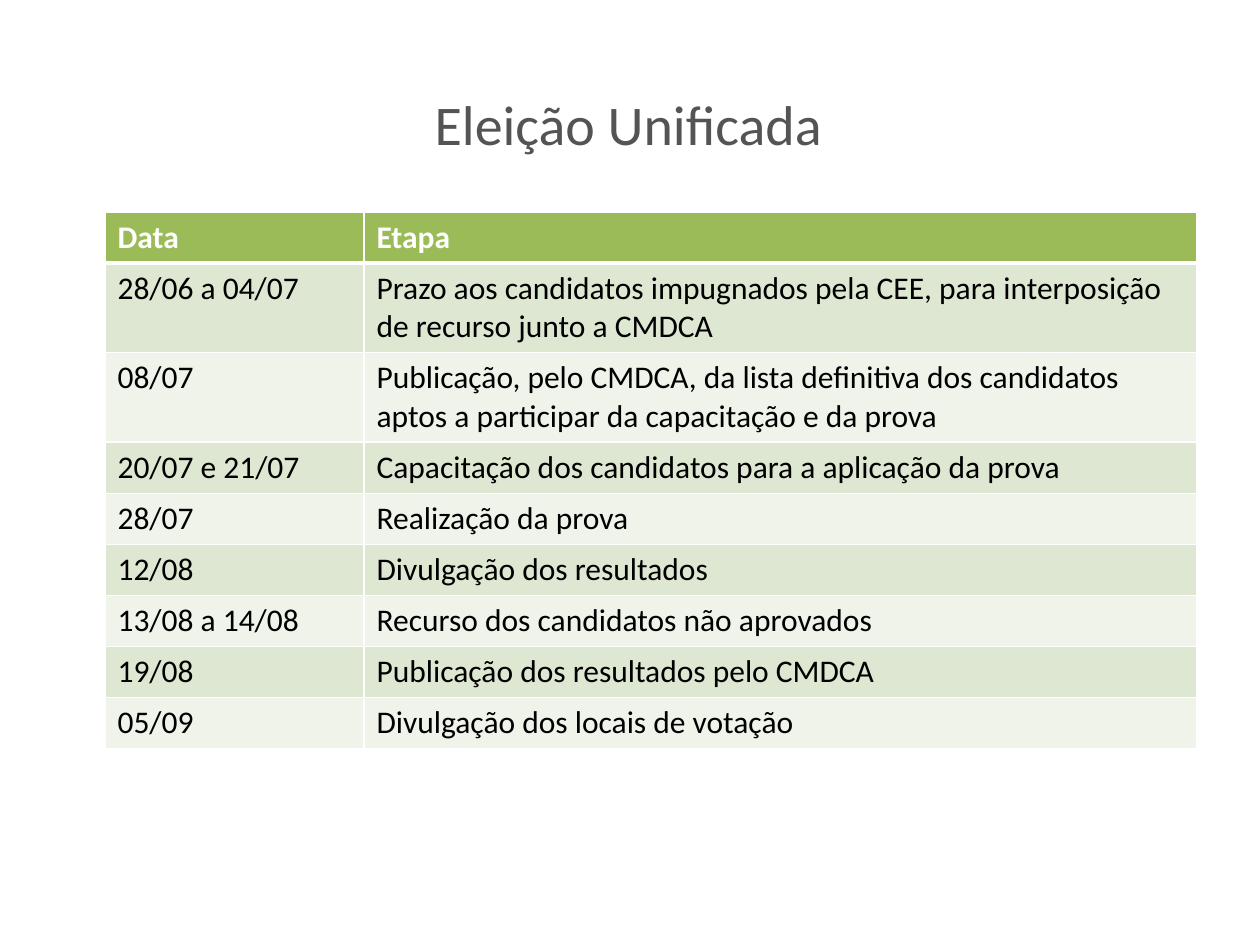
from dataclasses import dataclass

from lxml.etree import SubElement
from pptx import Presentation
from pptx.dml.color import RGBColor
from pptx.enum.text import MSO_ANCHOR, PP_ALIGN
from pptx.oxml.ns import qn
from pptx.slide import Slide
from pptx.table import _Cell as Cell
from pptx.text.text import TextFrame
from pptx.util import Emu, Pt

PX_PER_INCH = 126


@dataclass(frozen=True)
class Theme:
    font: str = "Calibri"
    title_size: int = 32
    table_size: int = 18
    title: str = "545454"
    heading: str = "FFFFFF"
    text: str = "000000"
    border: str = "FFFFFF"
    heading_fill: str = "9BBB59"
    band_fills: tuple[str, str] = ("DEE7D1", "EFF3EA")


@dataclass(frozen=True)
class Stage:
    date: str
    description: str
    lines: int = 1


THEME = Theme()
TITLE_BOX = (105, 67, 1047, 113)
TABLE_LEFT, TABLE_TOP = 105, 212
COLUMN_WIDTHS = (259, 833)
ROW_HEIGHTS = {1: 51, 2: 89}  # by number of text lines

STAGES = [
    Stage("Data", "Etapa"),
    Stage("28/06 a 04/07", "Prazo aos candidatos impugnados pela CEE, para "
          "interposição de recurso junto a CMDCA", 2),
    Stage("08/07", "Publicação, pelo CMDCA, da lista definitiva dos candidatos "
          "aptos a participar da capacitação e da prova", 2),
    Stage("20/07 e 21/07", "Capacitação dos candidatos para a aplicação da prova"),
    Stage("28/07", "Realização da prova"),
    Stage("12/08", "Divulgação dos resultados"),
    Stage("13/08 a 14/08", "Recurso dos candidatos não aprovados"),
    Stage("19/08", "Publicação dos resultados pelo CMDCA"),
    Stage("05/09", "Divulgação dos locais de votação"),
]


def px(length: int) -> Emu:
    return Emu(round(length * 914400 / PX_PER_INCH))


def write(frame: TextFrame, text: str, size: int, color: str, bold: bool = False) -> None:
    frame.text = text
    font = frame.paragraphs[0].runs[0].font
    font.name, font.size, font.bold = THEME.font, Pt(size), bold
    font.color.rgb = RGBColor.from_string(color)


def add_borders(cell: Cell, bottom: int, top: int) -> None:
    properties = cell._tc.get_or_add_tcPr()
    for side, width in (("L", 1), ("R", 1), ("T", top), ("B", bottom)):
        line = SubElement(properties, qn(f"a:ln{side}"), w=str(Pt(width)))
        fill = SubElement(line, qn("a:solidFill"))
        SubElement(fill, qn("a:srgbClr"), val=THEME.border)


def add_title(page: Slide, text: str) -> None:
    title = page.shapes.title
    title.left, title.top, title.width, title.height = map(px, TITLE_BOX)
    frame = title.text_frame
    frame.vertical_anchor = MSO_ANCHOR.MIDDLE
    write(frame, text, THEME.title_size, THEME.title)
    frame.paragraphs[0].alignment = PP_ALIGN.CENTER


def add_schedule(page: Slide, stages: list[Stage]) -> None:
    heights = [ROW_HEIGHTS[stage.lines] for stage in stages]
    table = page.shapes.add_table(
        len(stages), len(COLUMN_WIDTHS), px(TABLE_LEFT), px(TABLE_TOP),
        px(sum(COLUMN_WIDTHS)), px(sum(heights))).table
    for column, width in zip(table.columns, COLUMN_WIDTHS):
        column.width = px(width)
    for index, (stage, height) in enumerate(zip(stages, heights)):
        table.rows[index].height = px(height)
        heading = index == 0
        fill = THEME.heading_fill if heading else THEME.band_fills[(index - 1) % 2]
        color = THEME.heading if heading else THEME.text
        for cell, text in zip(table.rows[index].cells, (stage.date, stage.description)):
            write(cell.text_frame, text, THEME.table_size, color, heading)
            # The rule under the heading is heavier than the others
            add_borders(cell, bottom=3 if heading else 1, top=3 if index == 1 else 1)
            cell.fill.solid()
            cell.fill.fore_color.rgb = RGBColor.from_string(fill)


def main() -> None:
    deck = Presentation()
    deck.slide_width, deck.slide_height = px(1260), px(945)
    page = deck.slides.add_slide(deck.slide_layouts[5])
    # Title
    add_title(page, "Eleição Unificada")
    # Election schedule
    add_schedule(page, STAGES)
    deck.save("out.pptx")


if __name__ == "__main__":
    main()
